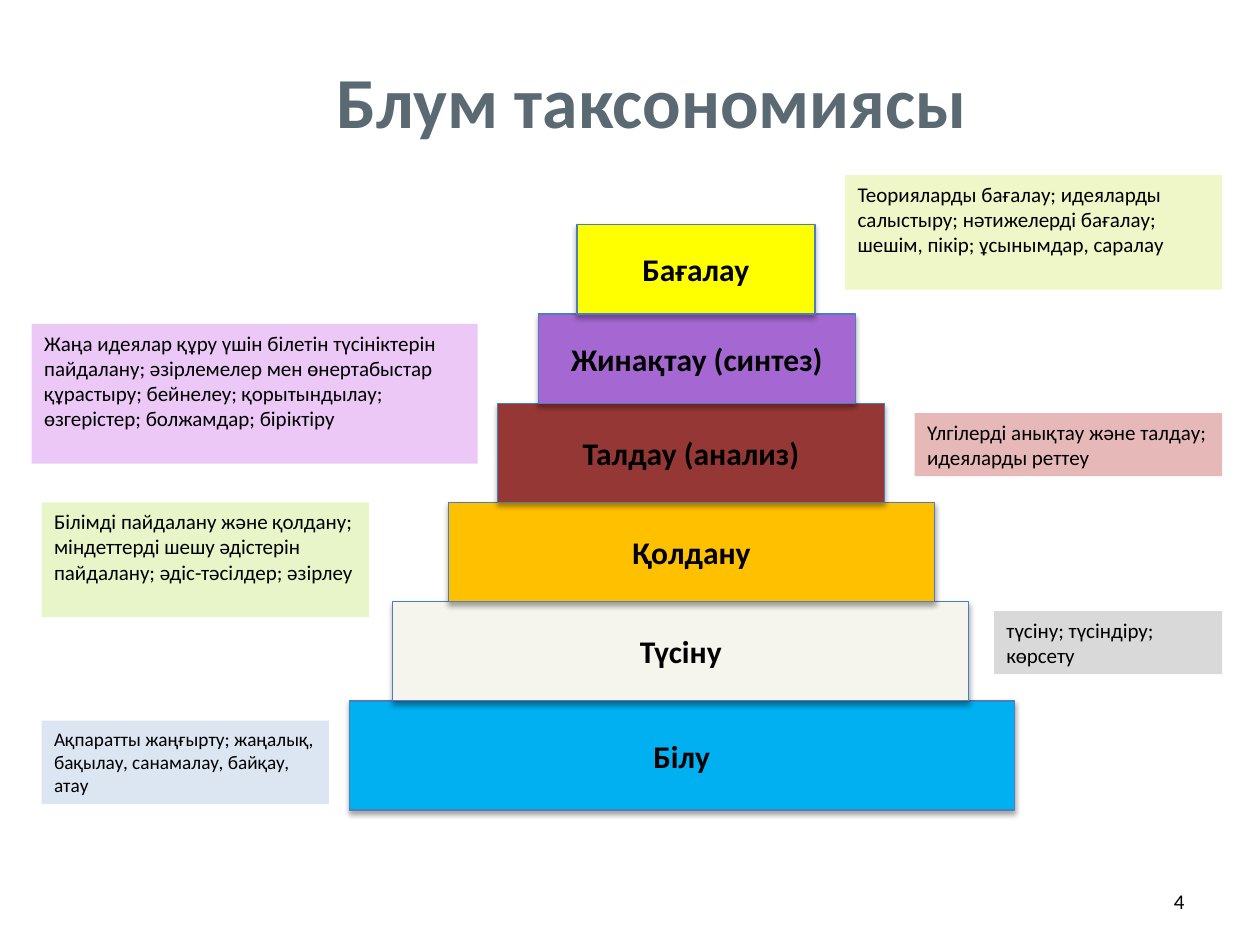
"""Build the Bloom's taxonomy pyramid slide."""
from lxml import etree
from pptx import Presentation
from pptx import util as u
from pptx.dml.color import RGBColor
from pptx.enum import shapes, text
from pptx.oxml import ns

COLORS = {
    "black": "000000", "title": "5B6973", "outline": "4B7EBC",
    "sky": "00B0F0", "ivory": "F5F4ED", "amber": "FFC000",
    "brick": "953735", "purple": "A568D2", "yellow": "FFFF00",
    "pale_blue": "DCE6F2", "pale_green": "E8F5C9", "lilac": "ECC8F6",
    "pale_lime": "EFF6C8", "rose": "E6B9B8", "grey": "D9D9D9",
}


def add_box(txt, *, at, fill=None, line=None, size=12, bold=False, color="black",
            align=text.PP_ALIGN.LEFT, anchor=text.MSO_ANCHOR.TOP):
    box = [u.Cm(v) for v in at]
    if fill:
        sp = s.shapes.add_shape(shapes.MSO_SHAPE.RECTANGLE, *box)
        sp.shadow.inherit = False
        sp.fill.solid()
        sp.fill.fore_color.rgb = RGBColor.from_string(COLORS[fill])
        if line:
            sp.line.color.rgb = RGBColor.from_string(COLORS[line])
            sp.line.width = u.Pt(0.75)
        else:
            sp.line.fill.background()
    else:
        sp = s.shapes.add_textbox(*box)
    tf = sp.text_frame
    tf.word_wrap = True
    tf.vertical_anchor = anchor
    p = tf.paragraphs[0]
    p.alignment = align
    r = p.add_run()
    r.text = txt
    r.font.name = "Calibri"
    r.font.size = u.Pt(size)
    r.font.bold = bold
    r.font.color.rgb = RGBColor.from_string(COLORS[color])
    return sp


def add_shadow(sp):
    effects = sp._element.spPr.find(ns.qn("a:effectLst"))
    shadow = etree.SubElement(effects, ns.qn("a:outerShdw"), blurRad=str(u.Pt(3.1)),
                              dist=str(u.Pt(1.8)), dir="5400000", rotWithShape="0")
    clr = etree.SubElement(shadow, ns.qn("a:srgbClr"), val=COLORS["black"])
    etree.SubElement(clr, ns.qn("a:alpha"), val="35000")


prs = Presentation()
prs.slide_width, prs.slide_height = u.Cm(25.4), u.Cm(19.05)
s = prs.slides.add_slide(prs.slide_layouts[6])

add_box("4", at=(18.21, 17.65, 5.92, 1.02), align=text.PP_ALIGN.RIGHT,
        anchor=text.MSO_ANCHOR.MIDDLE)

steps = [
    ("Білу", "sky", 7.04, 13.41, 2.2),
    ("Түсіну", "ivory", 7.92, 11.61, 2),
    ("Қолдану", "amber", 9.04, 9.8, 2),
    ("Талдау (анализ)", "brick", 10.03, 7.8, 2),
    ("Жинақтау (синтез)", "purple", 10.85, 6.4, 1.8),
    ("Бағалау", "yellow", 11.63, 4.8, 1.8),
]
top = 16.33
for name, fill, left, width, height in steps:
    top -= height
    sp = add_box(name, at=(left, top, width, height), fill=fill, line="outline",
                 size=18, bold=True, align=text.PP_ALIGN.CENTER,
                 anchor=text.MSO_ANCHOR.MIDDLE)
    add_shadow(sp)

notes = [
    ("Ақпаратты жаңғырту; жаңалық, бақылау, санамалау, байқау, атау",
     "pale_blue", 11, (0.84, 14.53, 5.79, 1.68)),
    ("Білімді пайдалану және қолдану; міндеттерді шешу әдістерін пайдалану; "
     "әдіс-тәсілдер; әзірлеу", "pale_green", 12, (0.84, 10.13, 6.6, 2.31)),
    ("Жаңа идеялар құру үшін білетін түсініктерін пайдалану; әзірлемелер мен "
     "өнертабыстар құрастыру; бейнелеу; қорытындылау; өзгерістер; болжамдар; "
     "біріктіру", "lilac", 12, (0.64, 6.53, 8.99, 2.82)),
    ("Теорияларды бағалау; идеяларды салыстыру; нәтижелерді бағалау; шешім, "
     "пікір; ұсынымдар, саралау", "pale_lime", 12, (17.04, 3.53, 7.6, 2.31)),
    ("Үлгілерді анықтау және талдау; идеяларды реттеу",
     "rose", 12, (18.44, 8.33, 6.2, 1.27)),
    ("түсіну; түсіндіру; көрсету", "grey", 12, (20.04, 12.32, 4.6, 1.27)),
]
for txt, fill, size, at in notes:
    add_box(txt, at=at, fill=fill, size=size)

add_box("Блум таксономиясы", at=(6.53, 1.02, 14.81, 2.01), size=41, bold=True,
        color="title")

prs.save("out.pptx")
